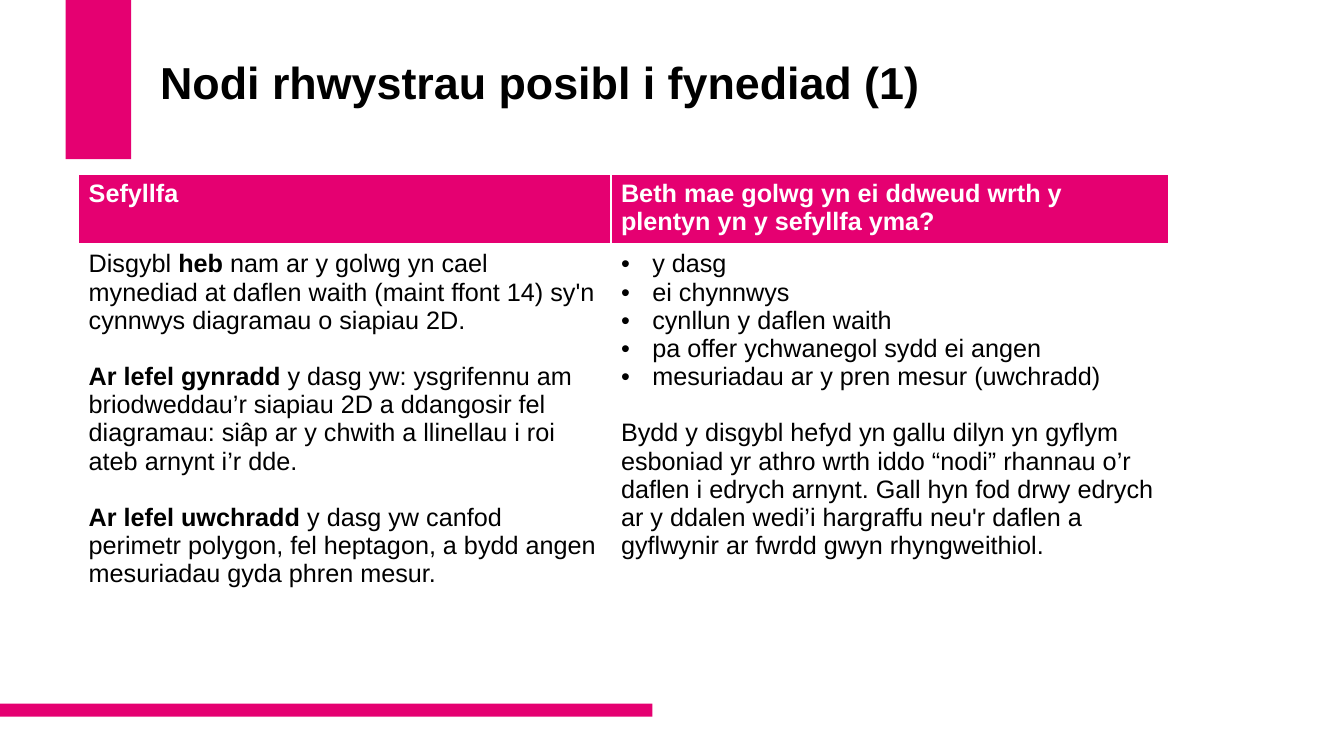
from lxml.etree import SubElement
from pptx import Presentation
from pptx.dml.color import RGBColor
from pptx.enum.shapes import MSO_SHAPE
from pptx.enum.text import MSO_ANCHOR
from pptx.oxml.ns import qn
from pptx.util import Inches, Pt

COLORS = {"pink": "E50071", "white": "FFFFFF", "black": "000000"}
FONT = "Arial"
TITLE = "Nodi rhwystrau posibl i fynediad (1)"
BARS = [(0.65, 0, 0.65, 1.58), (0, 6.98, 6.47, 0.13)]
COLUMN_WIDTHS = [5.28, 5.53]
ROW_HEIGHTS = [0.6, 4.31]
HEADINGS = [
    "Sefyllfa",
    "Beth mae golwg yn ei ddweud wrth y plentyn yn y sefyllfa yma?",
]
SITUATION = [
    [("Disgybl ", False), ("heb ", True),
     ("nam ar y golwg yn cael mynediad at daflen waith (maint ffont 14) "
      "sy'n cynnwys diagramau o siapiau 2D.", False)],
    [("Ar lefel gynradd ", True),
     ("y dasg yw: ysgrifennu am briodweddau’r siapiau 2D a ddangosir fel "
      "diagramau: siâp ar y chwith a llinellau i roi ateb arnynt i’r dde.", False)],
    [("Ar lefel uwchradd ", True),
     ("y dasg yw canfod perimetr polygon, fel heptagon, a bydd angen "
      "mesuriadau gyda phren mesur.", False)],
]
SEEN_ITEMS = [
    "y dasg",
    "ei chynnwys",
    "cynllun y daflen waith",
    "pa offer ychwanegol sydd ei angen",
    "mesuriadau ar y pren mesur (uwchradd)",
]
SEEN_NOTE = (
    "Bydd y disgybl hefyd yn gallu dilyn yn gyflym esboniad yr athro wrth iddo "
    "“nodi” rhannau o’r daflen i edrych arnynt. Gall hyn fod drwy edrych ar y "
    "ddalen wedi’i hargraffu neu'r daflen a gyflwynir ar fwrdd gwyn rhyngweithiol."
)
TEXT_SIZE = 18
PARAGRAPH_GAP = 20


def color(name):
    return RGBColor.from_string(COLORS[name])


def add_runs(para, spans, ink, size=TEXT_SIZE):
    for text, bold in spans:
        span = para.add_run()
        span.text = text
        span.font.name = FONT
        span.font.size = Pt(size)
        span.font.bold = bold
        span.font.color.rgb = color(ink)


def add_bullet(para):
    properties = para._p.get_or_add_pPr()
    properties.set("marL", str(Inches(0.31)))
    properties.set("indent", str(-Inches(0.31)))
    SubElement(properties, qn("a:buFont"), typeface=FONT)
    SubElement(properties, qn("a:buChar"), char="•")


def style_cell(cell, fill, bottom_width):
    properties = cell._tc.get_or_add_tcPr()
    for side, width in (("L", 1), ("R", 1), ("T", 1), ("B", bottom_width)):
        line = SubElement(properties, qn("a:ln" + side), w=str(Pt(width)))
        line_fill = SubElement(line, qn("a:solidFill"))
        SubElement(line_fill, qn("a:srgbClr"), val=COLORS["white"])
    cell.fill.solid()
    cell.fill.fore_color.rgb = color(fill)


def fill_cell(cell, paragraphs, ink):
    frame = cell.text_frame
    for index, (spans, bulleted, gap) in enumerate(paragraphs):
        para = frame.add_paragraph() if index else frame.paragraphs[0]
        if gap:
            para.space_before = Pt(PARAGRAPH_GAP)
        if bulleted:
            add_bullet(para)
        add_runs(para, spans, ink)


def add_bars(page):
    for bounds in BARS:
        bar = page.shapes.add_shape(MSO_SHAPE.RECTANGLE, *map(Inches, bounds))
        bar.shadow.inherit = False
        bar.fill.solid()
        bar.fill.fore_color.rgb = color("pink")
        bar.line.fill.background()


def add_title(page):
    box = page.shapes.add_textbox(Inches(1.49), Inches(0.4), Inches(9.6), Inches(1.45))
    frame = box.text_frame
    frame.word_wrap = True
    frame.vertical_anchor = MSO_ANCHOR.MIDDLE
    frame.margin_bottom = Inches(0.61)
    para = frame.paragraphs[0]
    para.line_spacing = 0.9
    add_runs(para, [(TITLE, True)], "black", 32)


def add_situation_table(page):
    table = page.shapes.add_table(
        len(ROW_HEIGHTS), len(COLUMN_WIDTHS), Inches(0.78), Inches(1.73),
        Inches(sum(COLUMN_WIDTHS)), Inches(sum(ROW_HEIGHTS)),
    ).table
    table.horz_banding = False
    for column, width in zip(table.columns, COLUMN_WIDTHS):
        column.width = Inches(width)
    for row, height in zip(table.rows, ROW_HEIGHTS):
        row.height = Inches(height)

    situation = [(spans, False, index > 0) for index, spans in enumerate(SITUATION)]
    seen = [([(item, False)], True, False) for item in SEEN_ITEMS]
    seen.append(([(SEEN_NOTE, False)], False, True))
    for index, (heading, body) in enumerate(zip(HEADINGS, (situation, seen))):
        head_cell, body_cell = table.cell(0, index), table.cell(1, index)
        style_cell(head_cell, "pink", 3)
        style_cell(body_cell, "white", 1)
        fill_cell(head_cell, [([(heading, True)], False, False)], "white")
        fill_cell(body_cell, body, "black")


def main():
    deck = Presentation()
    deck.slide_width, deck.slide_height = Inches(13.33), Inches(7.5)
    page = deck.slides.add_slide(deck.slide_layouts[6])
    add_bars(page)
    add_title(page)
    add_situation_table(page)
    deck.save("out.pptx")


if __name__ == "__main__":
    main()
